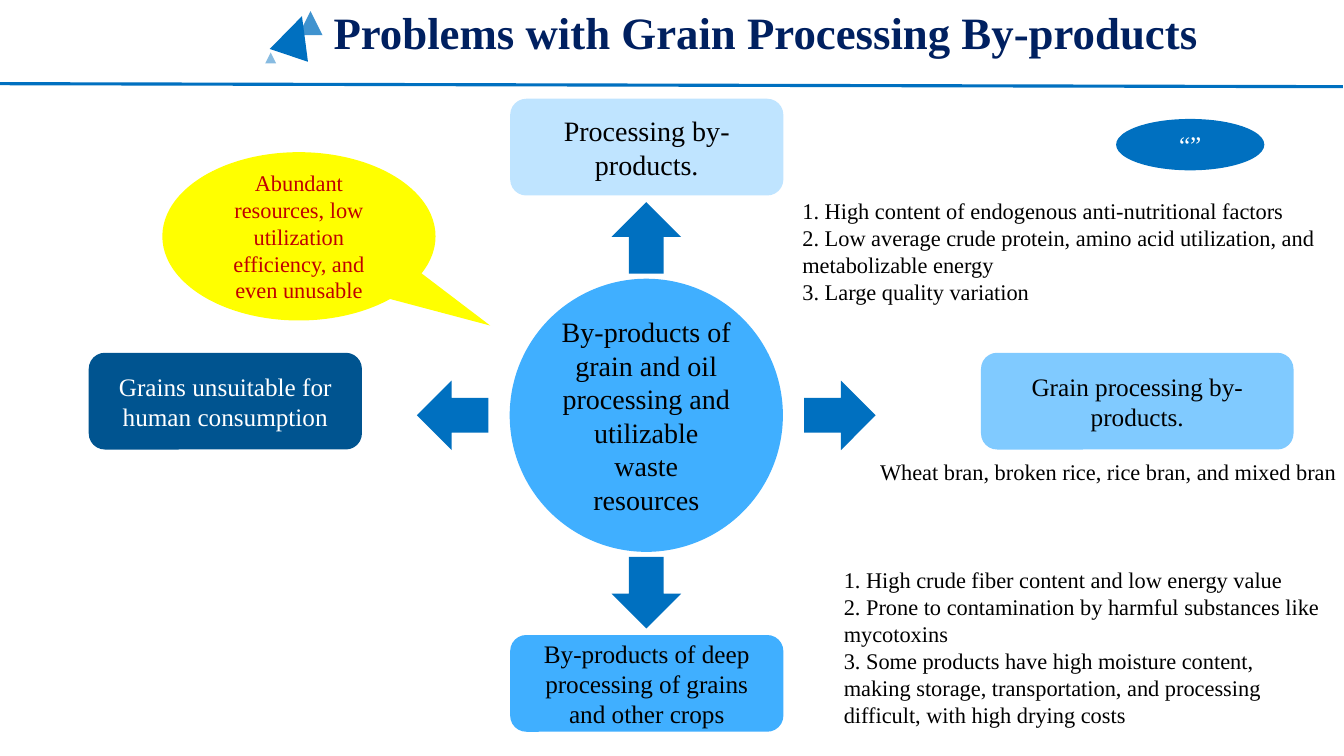
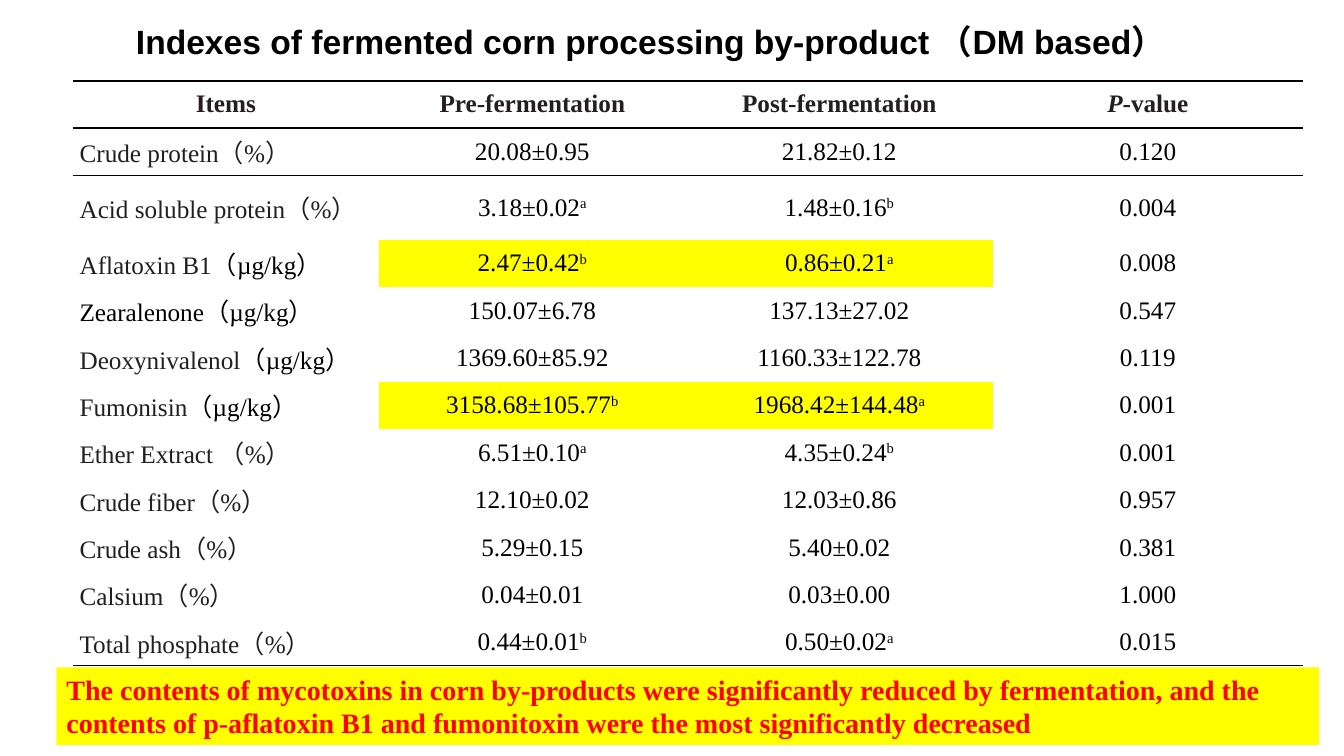
from lxml import etree
from pptx import Presentation
from pptx.dml.color import RGBColor
from pptx.enum.shapes import MSO_CONNECTOR, MSO_SHAPE as SHAPE
from pptx.enum.text import MSO_ANCHOR as ANCHOR, MSO_AUTO_SIZE as AUTO, PP_ALIGN as ALIGN
from pptx.oxml.ns import qn
from pptx.util import Inches, Pt

COLORS = {
    "blue": "0070C0", "navy": "002060", "deep": "005490", "sky": "40AFFF",
    "light": "80CAFF", "pale": "BFE4FF", "yellow": "FFFF00", "red": "FF0000",
    "dark_red": "C00000", "white": "FFFFFF", "black": "000000",
    "ink": "231F20", "rule": "080000",
}
SERIF, SANS = "Times New Roman", "Arial"
NO_STYLE = "{2D5ABB26-0587-4C30-8999-92F81FD0307C}"
CENTER_X, CENTER_Y = 6.41, 4.12

UNIT_PCT, UNIT_UG = "（%）", "（µg/kg）"
HEADINGS = ["Items", "Pre-fermentation", "Post-fermentation"]
# A caret sets off the superscript letter.
ROWS = [
    ("Crude protein", UNIT_PCT, "20.08±0.95", "21.82±0.12", "0.120"),
    ("Acid soluble protein", UNIT_PCT, "3.18±0.02^a", "1.48±0.16^b", "0.004"),
    ("Aflatoxin B1", UNIT_UG, "2.47±0.42^b", "0.86±0.21^a", "0.008"),
    ("Zearalenone", UNIT_UG, "150.07±6.78", "137.13±27.02", "0.547"),
    ("Deoxynivalenol", UNIT_UG, "1369.60±85.92", "1160.33±122.78", "0.119"),
    ("Fumonisin", UNIT_UG, "3158.68±105.77^b", "1968.42±144.48^a", "0.001"),
    ("Ether Extract ", UNIT_PCT, "6.51±0.10^a", "4.35±0.24^b", "0.001"),
    ("Crude fiber", UNIT_PCT, "12.10±0.02", "12.03±0.86", "0.957"),
    ("Crude ash", UNIT_PCT, "5.29±0.15", "5.40±0.02", "0.381"),
    ("Calsium", UNIT_PCT, "0.04±0.01", "0.03±0.00", "1.000"),
    ("Total phosphate", UNIT_PCT, "0.44±0.01^b", "0.50±0.02^a", "0.015"),
]
HIGHLIGHTED = ("Aflatoxin B1", "Fumonisin")


def rgb(name):
    return RGBColor.from_string(COLORS[name])


def add_run(p, text, color="black", superscript=False, **font):
    r = p.add_run()
    r.text = text
    r.font.color.rgb = rgb(color)
    for key, value in {"name": SERIF, "size": Pt(18), **font}.items():
        setattr(r.font, key, value)
    if superscript:
        r._r.get_or_add_rPr().set("baseline", "30000")


def add_paragraphs(tf, lines, align=ALIGN.LEFT, **font):
    for i, line in enumerate(lines):
        p = tf.add_paragraph() if i else tf.paragraphs[0]
        p.alignment = align
        add_run(p, line, **font)


def add_text(s, box, lines, wrap=True, **font):
    tf = s.shapes.add_textbox(*map(Inches, box)).text_frame
    tf.word_wrap = wrap
    tf.auto_size = AUTO.SHAPE_TO_FIT_TEXT
    add_paragraphs(tf, lines, **font)
    return tf


def add_filled(shapes, kind, box, fill, rotation=0, alpha=None):
    sp = shapes.add_shape(kind, *map(Inches, box))
    sp.shadow.inherit = False
    sp.fill.solid()
    sp.fill.fore_color.rgb = rgb(fill)
    sp.line.fill.background()
    sp.rotation = rotation
    if alpha:
        clr = sp._element.spPr.find(qn("a:solidFill")).find(qn("a:srgbClr"))
        etree.SubElement(clr, qn("a:alpha")).set("val", str(alpha * 1000))
    return sp


def add_label(s, kind, box, fill, text, **font):
    """Filled shape with centred text."""
    sp = add_filled(s.shapes, kind, box, fill)
    sp.text_frame.word_wrap = True
    sp.text_frame.vertical_anchor = ANCHOR.MIDDLE
    add_paragraphs(sp.text_frame, [text], align=ALIGN.CENTER, **font)
    return sp


def add_header(s, title):
    """Serif title with its triangle ornament and the line below."""
    line = s.shapes.add_connector(
        MSO_CONNECTOR.STRAIGHT, *map(Inches, (-0.02, 0.83, 13.32, 0.86)))
    line.line.color.rgb = rgb("blue")
    line.line.width = Pt(2.25)
    etree.SubElement(line._element.spPr, qn("a:effectLst"))
    group = s.shapes.add_group_shape()
    for box, rotation, alpha in (((2.96, 0.11, 0.24, 0.24), 0, 75),
                                 ((2.73, 0.15, 0.4, 0.41), 18.5, None),
                                 ((2.63, 0.52, 0.11, 0.11), 0, 47)):
        add_filled(group.shapes, SHAPE.ISOSCELES_TRIANGLE, box, "blue", rotation, alpha)
    add_text(s, (3.21, 0, 8.85, 0.64), [title], wrap=False,
             size=Pt(32), bold=True, color="navy")


def add_arrows(s):
    """Four arrows pointing away from the central circle."""
    w, h, dx, dy = 0.69, 0.71, 1.92, 1.76
    for rotation, x, y in ((0, 0, -dy), (90, dx, 0), (180, 0, dy), (270, -dx, 0)):
        box = (CENTER_X + x - w / 2, CENTER_Y + y - h / 2, w, h)
        add_filled(s.shapes, SHAPE.UP_ARROW, box, "blue", rotation)


def build_problems(s):
    add_header(s, "Problems with Grain Processing By-products")
    d = 2.71
    add_label(s, SHAPE.FLOWCHART_CONNECTOR, (CENTER_X - d / 2, CENTER_Y - d / 2, d, d), "sky",
              "By-products of grain and oil processing and utilizable waste resources",
              size=Pt(20))
    add_arrows(s)
    for x, y, w, fill, text, size, color in (
            (5.06, 0.98, d, "pale", "Processing by-products.", 20, "black"),
            (9.73, 3.5, 3.1, "light", "Grain processing by-products.", 18, "black"),
            (5.06, 6.3, d, "sky",
             "By-products of deep processing of grains and other crops", 18, "black"),
            (0.88, 3.5, d, "deep", "Grains unsuitable for human consumption", 18, "white")):
        add_label(s, SHAPE.ROUNDED_RECTANGLE, (x, y, w, 0.96), fill, text,
                  size=Pt(size), color=color)
    add_label(s, SHAPE.OVAL, (11.07, 1.18, 1.47, 0.51), "blue", "“”", color="white")
    callout = add_label(
        s, SHAPE.OVAL_CALLOUT, (1.61, 1.51, d, 1.67), "yellow",
        "Abundant resources, low utilization efficiency, and even unusable",
        size=Pt(16), color="dark_red")
    callout.adjustments[0], callout.adjustments[1] = 0.7, 0.53
    add_text(s, (8.63, 4.5, 4.85, 0.37),
             ["Wheat bran, broken rice, rice bran, and mixed bran"], wrap=False, size=Pt(16))
    add_text(s, (7.86, 1.91, 5.32, 1.18), [
        "1. High content of endogenous anti-nutritional factors",
        "2. Low average crude protein, amino acid utilization, and metabolizable energy",
        "3. Large quality variation"], size=Pt(16))
    add_text(s, (8.27, 5.57, 4.92, 1.72), [
        "1. High crude fiber content and low energy value",
        "2. Prone to contamination by harmful substances like mycotoxins",
        "3. Some products have high moisture content, making storage, transportation, "
        "and processing difficult, with high drying costs"], size=Pt(16))


def add_border(cell, side, width, color):
    ln = etree.SubElement(cell._tc.get_or_add_tcPr(), qn("a:ln" + side))
    ln.set("w", str(Pt(width)))
    fill = etree.SubElement(ln, qn("a:solidFill"))
    etree.SubElement(fill, qn("a:srgbClr")).set("val", COLORS[color])


def fill_cell(cell, runs, align=ALIGN.CENTER, borders=(), fill=None):
    """Write runs, given as (text, format) pairs, and style the cell."""
    cell.margin_left = cell.margin_right = Inches(0.07)
    cell.margin_top = cell.margin_bottom = 0
    cell.vertical_anchor = ANCHOR.MIDDLE
    for border in borders:
        add_border(cell, *border)
    if fill:
        cell.fill.solid()
        cell.fill.fore_color.rgb = rgb(fill)
    else:
        cell.fill.background()
    p = cell.text_frame.paragraphs[0]
    p.alignment = align
    for text, font in runs:
        add_run(p, text, **font)


def label_runs(name, unit):
    ink = {"color": "ink"}
    return [(name, {} if name == "Zearalenone" else ink),
            (unit, {} if unit == UNIT_UG else ink)]


def value_runs(value):
    number, _, letter = value.partition("^")
    return [(number, {})] + ([(letter, {"superscript": True})] if letter else [])


def add_index_table(s):
    widths, row_h = (3.04, 3.04, 3.05, 3.07), 0.47
    n = len(ROWS) + 1
    frame = s.shapes.add_table(
        n, len(widths), *map(Inches, (0.72, 0.8, sum(widths), n * row_h)))
    table = frame.table
    table._tbl.tblPr.find(qn("a:tableStyleId")).text = NO_STYLE
    table.first_row = table.horz_banding = False
    for col, width in zip(table.columns, widths):
        col.width = Inches(width)
    for row in table.rows:
        row.height = Inches(row_h)

    head = {"bold": True, "color": "ink"}
    headings = [[(text, head)] for text in HEADINGS]
    headings.append([("P", {**head, "italic": True}), ("-value", head)])
    for c, runs in enumerate(headings):
        fill_cell(table.cell(0, c), runs, borders=[("T", 1.5, "rule"), ("B", 1, "rule")])

    borders = {1: [("T", 1, "rule")], n - 1: [("B", 1, "black")]}
    for r, (name, unit, *values) in enumerate(ROWS, 1):
        edge = borders.get(r, ())
        fill_cell(table.cell(r, 0), label_runs(name, unit), ALIGN.LEFT, edge)
        for c, value in enumerate(values, 1):
            marked = name in HIGHLIGHTED and c < 3
            fill_cell(table.cell(r, c), value_runs(value), borders=edge,
                      fill="yellow" if marked else None)


def build_indexes(s):
    add_index_table(s)
    band = add_filled(s.shapes, SHAPE.RECTANGLE, (0.56, 6.62, 12.52, 0.77), "yellow")
    band.text_frame.word_wrap = True
    band.text_frame.vertical_anchor = ANCHOR.TOP
    add_paragraphs(band.text_frame, [
        "The contents of mycotoxins in corn by-products were significantly reduced by "
        "fermentation, and the contents of p-aflatoxin B1 and fumonitoxin were the most "
        "significantly decreased"], size=Pt(20), bold=True, color="red")
    tf = add_text(s, (1.25, 0.2, 10.82, 0.83),
                  ["Indexes of fermented corn processing by-product （DM based）"],
                  name=SANS, size=Pt(24), bold=True)
    tf.auto_size = AUTO.NONE
    tf.paragraphs[0].line_spacing = 0.9


def main():
    prs = Presentation()
    prs.slide_width, prs.slide_height = Inches(13.33), Inches(7.5)
    for build in (build_problems, build_indexes):
        build(prs.slides.add_slide(prs.slide_layouts[6]))
    prs.save("out.pptx")


if __name__ == "__main__":
    main()
